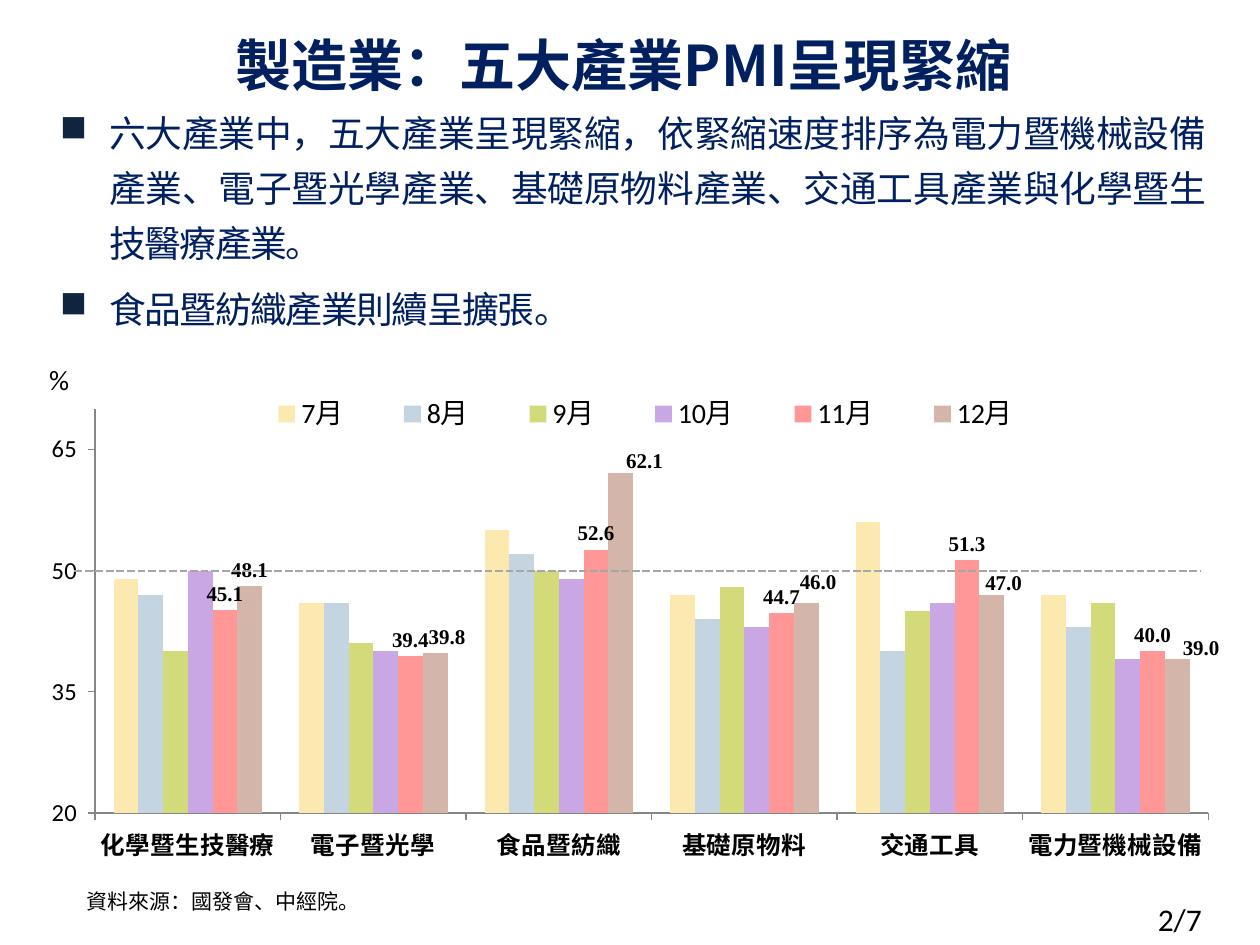
from lxml import etree
from pptx import Presentation, util as u
from pptx.chart.data import CategoryChartData
from pptx.dml.color import RGBColor
from pptx.enum import chart as charts, dml, shapes, text
from pptx.oxml import parse_xml
from pptx.oxml.ns import nsdecls, qn

NAVY = RGBColor(0x00, 0x20, 0x60)
BLACK = RGBColor(0x00, 0x00, 0x00)
GRAY = RGBColor(0xA6, 0xA6, 0xA6)
AXIS_GRAY = RGBColor(0x86, 0x86, 0x86)
BULLET_COLOR = "0F243E"
HEADING_FONT = "Noto Sans CJK SC"
SOURCE_FONT = "Noto Sans CJK JP"
LATIN_FONT = "Calibri"
LABEL_FONT = "Times New Roman"

INDUSTRIES = ["化學暨生技醫療", "電子暨光學", "食品暨紡織",
              "基礎原物料", "交通工具", "電力暨機械設備"]
MONTHS = [
    ("7月", (49, 46, 55, 47, 56, 47), RGBColor(0xFC, 0xE9, 0xAF)),
    ("8月", (47, 46, 52, 44, 40, 43), RGBColor(0xC5, 0xD4, 0xE1)),
    ("9月", (40, 41, 50, 48, 45, 46), RGBColor(0xD2, 0xDA, 0x7A)),
    ("10月", (50, 40, 49, 43, 46, 39), RGBColor(0xC9, 0xA6, 0xE4)),
    ("11月", (45.1, 39.4, 52.6, 44.7, 51.3, 40), RGBColor(0xFF, 0x97, 0x97)),
    ("12月", (48.1, 39.8, 62.1, 46, 47, 39), RGBColor(0xD4, 0xB5, 0xAA)),
]
LABELED_MONTHS = ("11月", "12月")
# Shift of each December label, as a share of the chart's width and height
DECEMBER_SHIFTS = [(0, 0), (0.01, 0), (0.02, 0.01),
                   (0.01, -0.01), (0.01, 0.01), (0.02, 0.01)]


def style_font(font, name, size, color=BLACK, bold=False):
    font.size, font.bold = u.Pt(size), bold
    font.color.rgb = color
    font.name = name
    etree.SubElement(font._rPr, qn("a:ea")).set("typeface", name)


def manual_layout(x, y, width=None, height=None, inner=False):
    """Return a c:layout; without a size it is an offset from the default place."""
    parts = []
    if inner:
        parts.append(("layoutTarget", "inner"))
    if width is not None:
        parts += [("xMode", "edge"), ("yMode", "edge")]
    parts += [("x", x), ("y", y)]
    if width is not None:
        parts += [("w", width), ("h", height)]
    body = "".join(f'<c:{tag} val="{value}"/>' for tag, value in parts)
    return parse_xml(f"<c:layout {nsdecls('c')}><c:manualLayout>{body}"
                     "</c:manualLayout></c:layout>")


def set_layout(parent, layout, after=None):
    for old in parent.findall(qn("c:layout")):
        parent.remove(old)
    if after is None:
        parent.insert(0, layout)
    else:
        parent.find(qn(after)).addnext(layout)


class SlideBuilder:
    def __init__(self, slide):
        self.slide = slide

    def paragraph(self, frame, runs, font, size, color=BLACK, bold=False, align=None,
                  line=None, before=None, margin=0, indent=0, bullet=None):
        """Fill the empty first paragraph or add one; runs are (text, spacing) pairs."""
        paragraph = frame.paragraphs[0]
        if paragraph.runs:
            paragraph = frame.add_paragraph()
        paragraph.alignment = align
        if line is not None:
            paragraph.line_spacing = line
        if before is not None:
            paragraph.space_before = u.Pt(before)
        properties = paragraph._p.get_or_add_pPr()
        properties.set("marL", str(u.Cm(margin)))
        properties.set("indent", str(u.Cm(indent)))
        if bullet:
            color_element = etree.SubElement(properties, qn("a:buClr"))
            etree.SubElement(color_element, qn("a:srgbClr")).set("val", BULLET_COLOR)
            etree.SubElement(properties, qn("a:buChar")).set("char", bullet)
        for words, spacing in runs:
            run = paragraph.add_run()
            run.text = words
            style_font(run.font, font, size, color, bold)
            if spacing:
                run.font._rPr.set("spc", str(spacing))

    def panel(self, left, top, width, height, anchor):
        """Add an unfilled rounded rectangle and return its text frame."""
        shape = self.slide.shapes.add_shape(
            shapes.MSO_SHAPE.ROUNDED_RECTANGLE,
            u.Cm(left), u.Cm(top), u.Cm(width), u.Cm(height))
        shape.shadow.inherit = False
        shape.fill.background()
        shape.line.fill.background()
        frame = shape.text_frame
        frame.word_wrap = True
        frame.vertical_anchor = anchor
        return frame

    def text_box(self, left, top, width, height):
        frame = self.slide.shapes.add_textbox(
            u.Cm(left), u.Cm(top), u.Cm(width), u.Cm(height)).text_frame
        frame.word_wrap = True
        return frame

    def dashed_line(self, left, right, y):
        line = self.slide.shapes.add_connector(
            shapes.MSO_CONNECTOR.STRAIGHT, u.Cm(left), u.Cm(y), u.Cm(right), u.Cm(y))
        line.line.color.rgb = GRAY
        line.line.width = u.Pt(1.5)
        line.line.dash_style = dml.MSO_LINE.SQUARE_DOT
        etree.SubElement(line._element.spPr, qn("a:effectLst"))

    def column_chart(self, left, top, width, height):
        data = CategoryChartData(number_format="0.0")
        data.categories = INDUSTRIES
        for month, values, _ in MONTHS:
            data.add_series(month, values)
        chart = self.slide.shapes.add_chart(
            charts.XL_CHART_TYPE.COLUMN_CLUSTERED,
            u.Cm(left), u.Cm(top), u.Cm(width), u.Cm(height), data).chart
        style_font(chart.font, LATIN_FONT, 18)
        chart.has_title = False
        chart.has_legend = True
        legend = chart.legend
        legend.position = charts.XL_LEGEND_POSITION.TOP
        legend.include_in_layout = True
        style_font(legend.font, LATIN_FONT, 16)
        set_layout(legend._element, manual_layout(0.16, 0.05, 0.7, 0.08),
                   after="c:legendPos")
        set_layout(chart._chartSpace.chart.plotArea,
                   manual_layout(0.05, 0.08, 0.93, 0.81, inner=True))
        self.style_axes(chart)
        plot = chart.plots[0]
        plot.gap_width, plot.overlap = 150, 0
        plot.vary_by_categories = False
        for series, (month, _, color) in zip(plot.series, MONTHS):
            series.format.fill.solid()
            series.format.fill.fore_color.rgb = color
            series.invert_if_negative = False
            if month in LABELED_MONTHS:
                self.label_series(series)
        self.shift_labels(plot.series[-1])

    def style_axes(self, chart):
        for axis, font, bold in ((chart.category_axis, HEADING_FONT, True),
                                 (chart.value_axis, LATIN_FONT, False)):
            axis.has_major_gridlines = False
            axis.major_tick_mark = charts.XL_TICK_MARK.OUTSIDE
            axis.format.line.color.rgb = AXIS_GRAY
            style_font(axis.tick_labels.font, font, 14, bold=bold)
        values = chart.value_axis
        values.minimum_scale, values.maximum_scale, values.major_unit = 20, 70, 15
        values.tick_labels.number_format = "0_ ;[Red]\\-0\\ "
        values.tick_labels.number_format_is_linked = False

    def label_series(self, series):
        labels = series.data_labels
        labels.show_value = True
        labels.number_format = "0.0"
        labels.number_format_is_linked = False
        labels.position = charts.XL_LABEL_POSITION.OUTSIDE_END
        style_font(labels.font, LABEL_FONT, 12, bold=True)

    def shift_labels(self, series):
        for index, _ in enumerate(DECEMBER_SHIFTS):
            label = series.points[index].data_label
            style_font(label.font, LABEL_FONT, 12, bold=True)
            label.position = charts.XL_LABEL_POSITION.OUTSIDE_END
        for element, shift in zip(series._element.iter(qn("c:dLbl")), DECEMBER_SHIFTS):
            set_layout(element, manual_layout(*shift), after="c:idx")


def main():
    presentation = Presentation()
    presentation.slide_width, presentation.slide_height = u.Cm(25.4), u.Cm(19.05)
    builder = SlideBuilder(presentation.slides.add_slide(presentation.slide_layouts[6]))

    builder.paragraph(builder.text_box(23.09, 18.01, 2.31, 1.02),
                      [("2/7", 0)], LATIN_FONT, 18)
    builder.column_chart(0.71, 7.44, 24.13, 10.06)
    builder.dashed_line(1.5, 24.21, 11.51)
    builder.paragraph(builder.text_box(1.5, 17.88, 24.87, 0.69),
                      [("資料來源：國發會、中經院。", 0)], SOURCE_FONT, 12,
                      line=u.Pt(12), before=2, margin=0.76, indent=-0.76)

    title = builder.panel(0, 0, 25.4, 2.54, text.MSO_ANCHOR.MIDDLE)
    builder.paragraph(title, [("製造業：五大產業PMI呈現緊縮 ", 0)], HEADING_FONT, 32,
                      NAVY, bold=True, align=text.PP_ALIGN.CENTER, line=u.Pt(40),
                      margin=2, indent=-2)

    body = builder.panel(0.43, 1.73, 24.41, 5.72, text.MSO_ANCHOR.TOP)
    body.margin_top = body.margin_bottom = 0
    body.margin_right = u.Cm(0.28)
    findings = [
        [("六大產業中，五大產業呈現緊縮，依緊縮速度排序為電力暨機械設備產業、"
          "電子暨光學產業、基礎原物料產業、交通工具產業與化學暨生技醫療產業。", -80)],
        [("食品暨紡織產業則續呈擴張", -80), ("。", 0)],
    ]
    for runs in findings:
        builder.paragraph(body, runs, HEADING_FONT, 21, NAVY,
                          align=text.PP_ALIGN.JUSTIFY, line=1.25, before=6,
                          margin=1.24, indent=-0.99, bullet="■")

    builder.paragraph(builder.text_box(0.74, 7.19, 1.6, 0.94),
                      [("%", 0)], LATIN_FONT, 16)
    presentation.save("out.pptx")


if __name__ == "__main__":
    main()
